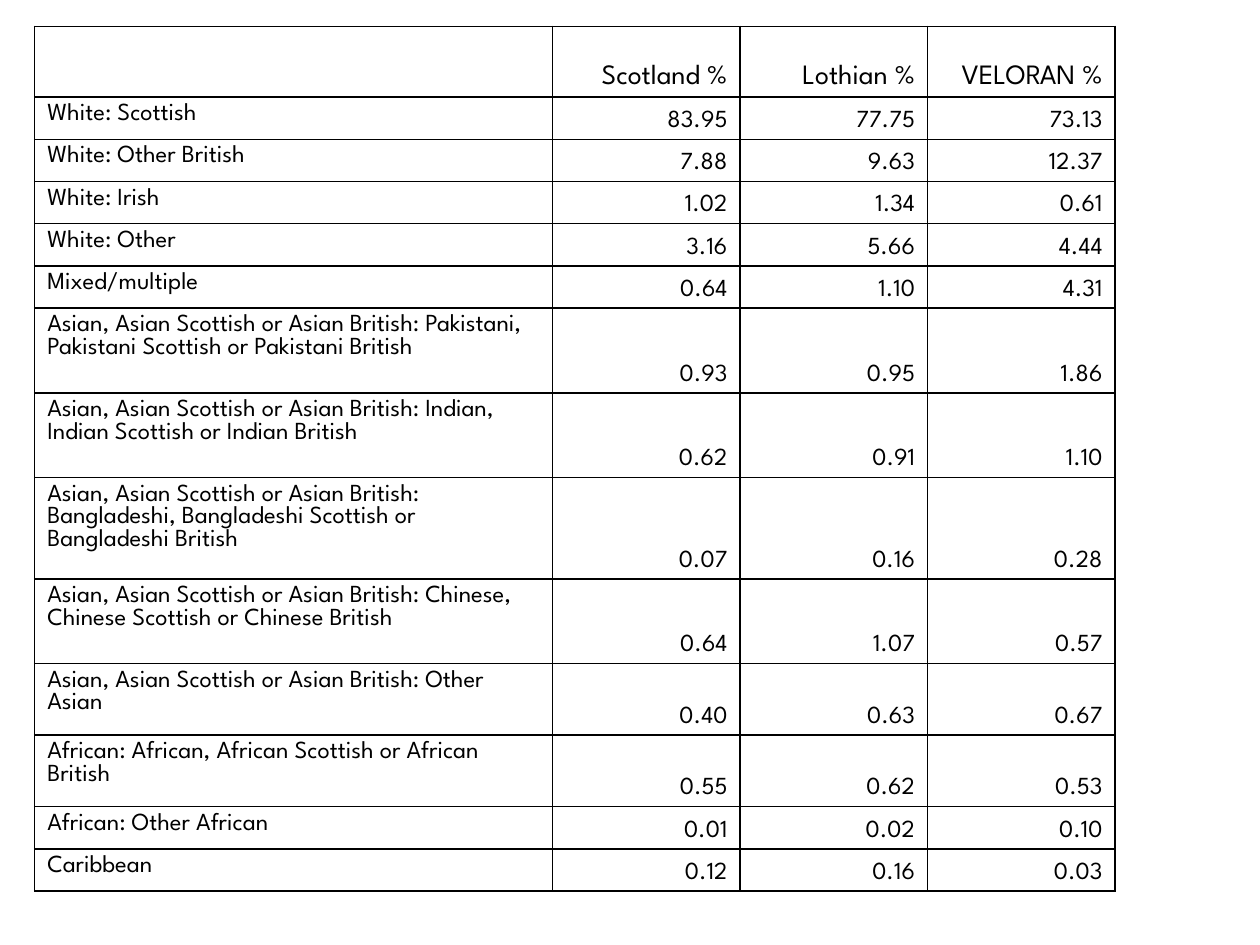
from typing import NamedTuple

import pptx
import pptx.dml.color
import pptx.enum.text
import pptx.oxml
import pptx.oxml.ns
import pptx.util
from pptx.util import Cm

FONT = "League Spartan"
BLACK = "000000"
WHITE = "FFFFFF"
LABEL_WIDTH, VALUE_WIDTH = Cm(10.44), Cm(3.78)
HEADER_HEIGHT = Cm(1.43)
SINGLE, DOUBLE, DOUBLE_LOOSE, TRIPLE = Cm(0.85), Cm(1.44), Cm(1.71), Cm(2.04)
ASIAN = "Asian, Asian Scottish or Asian British: "


class EthnicGroup(NamedTuple):
    label: str
    scotland: str
    lothian: str
    cohort: str
    height: int = SINGLE


REGIONS = ("Scotland %", "Lothian %", "VELORAN %")
GROUPS = (
    EthnicGroup("White: Scottish", "83.95", "77.75", "73.13"),
    EthnicGroup("White: Other British", "7.88", "9.63", "12.37"),
    EthnicGroup("White: Irish", "1.02", "1.34", "0.61"),
    EthnicGroup("White: Other", "3.16", "5.66", "4.44"),
    EthnicGroup("Mixed/multiple", "0.64", "1.10", "4.31"),
    EthnicGroup(ASIAN + "Pakistani, Pakistani Scottish or Pakistani British",
                "0.93", "0.95", "1.86", DOUBLE_LOOSE),
    EthnicGroup(ASIAN + "Indian, Indian Scottish or Indian British",
                "0.62", "0.91", "1.10", DOUBLE_LOOSE),
    EthnicGroup(ASIAN + "Bangladeshi, Bangladeshi Scottish or Bangladeshi British",
                "0.07", "0.16", "0.28", TRIPLE),
    EthnicGroup(ASIAN + "Chinese, Chinese Scottish or Chinese British",
                "0.64", "1.07", "0.57", DOUBLE_LOOSE),
    EthnicGroup(ASIAN + "Other Asian", "0.40", "0.63", "0.67", DOUBLE),
    EthnicGroup("African: African, African Scottish or African British",
                "0.55", "0.62", "0.53", DOUBLE),
    EthnicGroup("African: Other African", "0.01", "0.02", "0.10"),
    EthnicGroup("Caribbean", "0.12", "0.16", "0.03"),
)


def rgb(color: str) -> pptx.dml.color.RGBColor:
    return pptx.dml.color.RGBColor.from_string(color)


def add_borders(cell, color: str = BLACK, width: float = 1) -> None:
    """Outline all four sides; must run before the fill is set, as schema order requires."""
    properties = cell._tc.get_or_add_tcPr()
    for side in ("lnL", "lnR", "lnT", "lnB"):
        properties.append(pptx.oxml.parse_xml(
            f'<a:{side} {pptx.oxml.ns.nsdecls("a")} w="{pptx.util.Pt(width)}">'
            f'<a:solidFill><a:srgbClr val="{color}"/></a:solidFill></a:{side}>'))


def write(cell, text: str, *, size: float = 14, color: str = BLACK,
          is_value: bool = False) -> None:
    """Write a cell's text; values sit at the bottom right."""
    paragraph = cell.text_frame.paragraphs[0]
    if is_value:
        cell.vertical_anchor = pptx.enum.text.MSO_ANCHOR.BOTTOM
        paragraph.alignment = pptx.enum.text.PP_ALIGN.RIGHT
    if text:
        run = paragraph.add_run()
        run.text = text
        run.font.name = FONT
        run.font.size = pptx.util.Pt(size)
        run.font.bold = False
        run.font.color.rgb = rgb(color)


def fill_row(table, index: int, texts: tuple[str, ...], height: int,
             size: float = 14) -> None:
    table.rows[index].height = height
    for column, text in enumerate(texts):
        cell = table.cell(index, column)
        add_borders(cell)
        if index == 0:
            cell.fill.solid()
            cell.fill.fore_color.rgb = rgb(WHITE)
        else:
            cell.fill.background()
        write(cell, text, size=size, is_value=column > 0)


def main() -> None:
    presentation = pptx.Presentation()
    presentation.slide_width, presentation.slide_height = Cm(25.4), Cm(19.05)
    slide = presentation.slides.add_slide(presentation.slide_layouts[6])

    widths = [LABEL_WIDTH] + [VALUE_WIDTH] * len(REGIONS)
    height = HEADER_HEIGHT + sum(group.height for group in GROUPS)
    ethnicity = slide.shapes.add_table(
        len(GROUPS) + 1, len(widths), Cm(0.7), Cm(0.53), sum(widths), height).table
    ethnicity.first_row = ethnicity.horz_banding = False
    for column, width in zip(ethnicity.columns, widths):
        column.width = width

    fill_row(ethnicity, 0, ("", *REGIONS), HEADER_HEIGHT, size=16)
    for index, group in enumerate(GROUPS, start=1):
        fill_row(ethnicity, index, group[:4], group.height)

    presentation.save("out.pptx")


if __name__ == "__main__":
    main()
